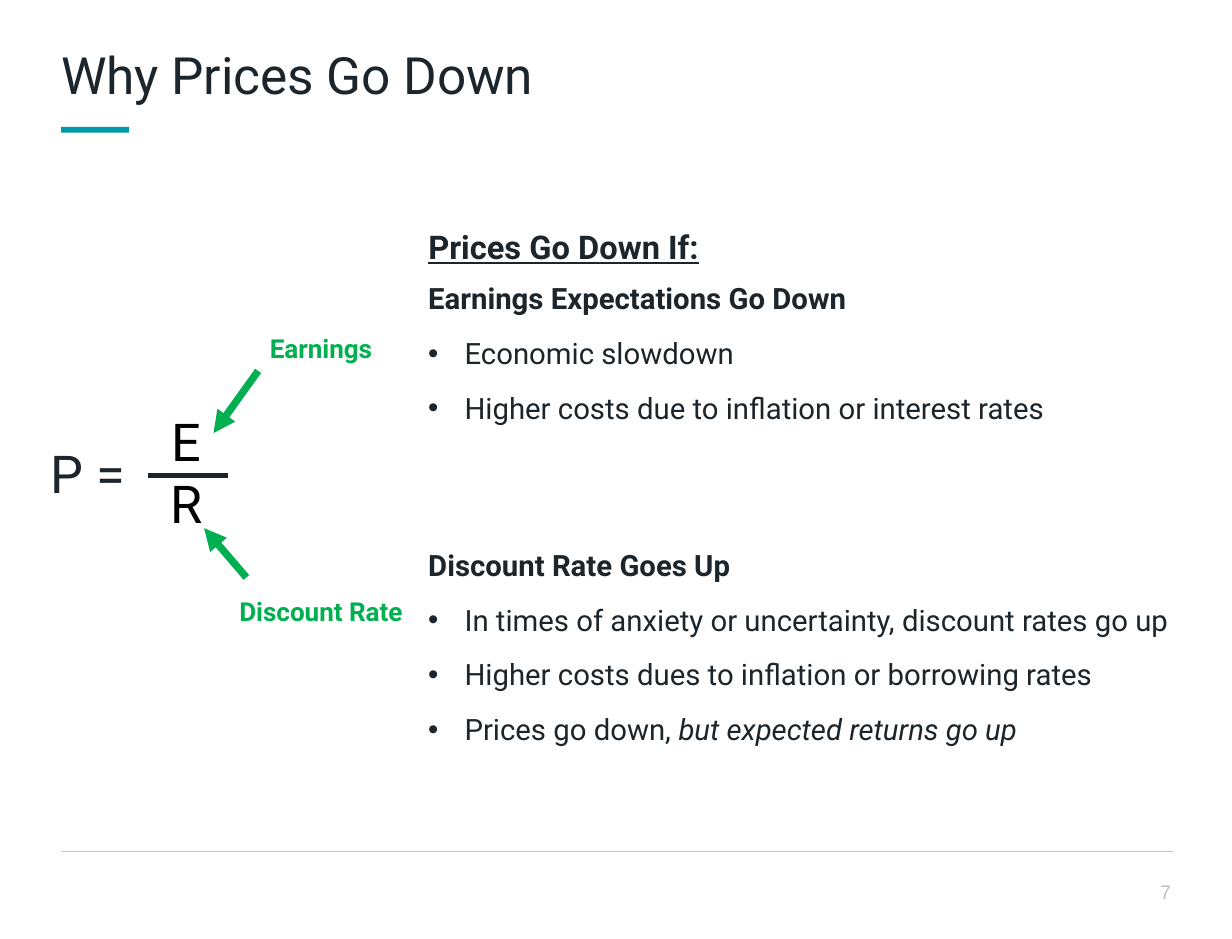
from dataclasses import dataclass

from lxml.etree import SubElement
from pptx import Presentation
from pptx.dml.color import RGBColor
from pptx.enum.shapes import MSO_CONNECTOR, MSO_SHAPE
from pptx.enum.text import MSO_ANCHOR, MSO_AUTO_SIZE, PP_ALIGN
from pptx.oxml.ns import qn
from pptx.util import Inches, Pt


@dataclass
class Theme:
    font: str = "Roboto"
    number_font: str = "Arial"
    title: str = "1D252C"
    ink: str = "1C252B"
    black: str = "000000"
    accent: str = "0099A9"
    green: str = "00B050"
    rule: str = "BBC8C5"
    number: str = "BFBFBF"
    title_size: float = 31.5
    formula_size: float = 32
    heading_size: float = 20
    body_size: float = 18
    label_size: float = 16
    number_size: float = 12


theme = Theme()


def add_text(s, at, lines, size, color, bold=False, align=PP_ALIGN.LEFT, font=theme.font):
    """Add a text box without margins; each line is a list of runs."""
    tf = s.shapes.add_textbox(*[Inches(v) for v in at]).text_frame
    tf.word_wrap = True
    tf.margin_left = tf.margin_right = tf.margin_top = tf.margin_bottom = 0
    for i, runs in enumerate(lines):
        p = tf.paragraphs[0] if i == 0 else tf.add_paragraph()
        p.alignment = align
        for text in runs:
            r = p.add_run()
            r.text = text
            r.font.name, r.font.size, r.font.bold = font, Pt(size), bold
            r.font.color.rgb = RGBColor.from_string(color)
    return tf


def add_line(s, start, end, color, width, arrow=False):
    """Add a straight line, with an arrowhead at its end if asked."""
    points = [Inches(v) for v in (*start, *end)]
    line = s.shapes.add_connector(MSO_CONNECTOR.STRAIGHT, *points)
    line.line.color.rgb = RGBColor.from_string(color)
    line.line.width = Pt(width)
    if arrow:
        SubElement(line.line._get_or_add_ln(), qn("a:tailEnd"), type="triangle")
    SubElement(line._element.spPr, qn("a:effectLst"))


prs = Presentation()
prs.slide_width, prs.slide_height = Inches(10.5), Inches(8)
s = prs.slides.add_slide(prs.slide_layouts[5])

# Title with accent bar
title = s.shapes.title
title.left, title.top = Inches(0.52), Inches(0.37)
title.width, title.height = Inches(9.46), Inches(0.55)
tf = title.text_frame
tf.text = "Why Prices Go Down"
tf.auto_size = MSO_AUTO_SIZE.NONE
tf.vertical_anchor = MSO_ANCHOR.TOP
tf.margin_left = tf.margin_right = tf.margin_top = tf.margin_bottom = 0
p = tf.paragraphs[0]
p.alignment = PP_ALIGN.LEFT
r = p.runs[0]
r.font.name, r.font.size = theme.font, Pt(theme.title_size)
r.font.color.rgb = RGBColor.from_string(theme.title)

bar = s.shapes.add_shape(MSO_SHAPE.RECTANGLE, Inches(0.52), Inches(1.08), Inches(0.58), Inches(0.05))
bar.shadow.inherit = False
bar.fill.solid()
bar.fill.fore_color.rgb = RGBColor.from_string(theme.accent)
bar.line.fill.background()

# Footer rule and page number
add_line(s, (0.52, 7.25), (10, 7.25), theme.rule, 0.25)
add_text(s, (9.41, 7.5, 0.57, 0.2), [["7"]], theme.number_size, theme.number,
         align=PP_ALIGN.RIGHT, font=theme.number_font)

# Formula: P = E / R
add_text(s, (0.43, 3.76, 0.8, 0.55), [["P ="]], theme.formula_size, theme.ink)
tf = add_text(s, (1.19, 3.49, 0.8, 1.06), [["E"], ["R"]], theme.formula_size, theme.black,
              align=PP_ALIGN.CENTER)
tf.vertical_anchor = MSO_ANCHOR.MIDDLE
add_line(s, (1.26, 4.05), (1.94, 4.05), theme.ink, 3)

# Labels pointing at the terms
for text, at, start, end in [
    ("Earnings", (2.3, 2.83, 0.95, 0.27), (2.2, 3.16), (1.82, 3.69)),
    ("Discount Rate", (2.04, 5.07, 1.5, 0.27), (2.1, 4.92), (1.74, 4.5)),
]:
    add_text(s, at, [[text]], theme.label_size, theme.green, bold=True)
    add_line(s, start, end, theme.green, 4.5, arrow=True)

# Heading of the explanation
tf = add_text(s, (3.65, 1.9, 2.59, 0.35), [["Prices Go Down If:"]], theme.heading_size,
              theme.ink, bold=True)
tf.paragraphs[0].line_spacing = 1.1
tf.paragraphs[0].runs[0].font.underline = True

# Two reasons, each a bold line followed by bullets
reasons = [
    (2.39, 1.4, [
        ["Earnings Expectations Go Down"],
        ["Economic slowdown"],
        ["Higher costs due to inflation or interest rates"],
    ]),
    (4.66, 1.85, [
        ["Discount Rate Goes Up"],
        ["In times of anxiety or uncertainty, discount rates go up"],
        ["Higher costs dues to inflation or borrowing rates"],
        ["Prices go down, ", "but expected returns go up"],
    ]),
]
for top, height, lines in reasons:
    tf = add_text(s, (3.65, top, 6.73, height), lines, theme.body_size, theme.ink)
    for i, p in enumerate(tf.paragraphs):
        p.space_after = Pt(12)
        if i == 0:
            p.runs[0].font.bold = True
            continue
        pPr = p._p.get_or_add_pPr()
        pPr.set("marL", str(Inches(0.31)))
        pPr.set("indent", str(Inches(-0.31)))
        SubElement(pPr, qn("a:buFont"), typeface="Arial")
        SubElement(pPr, qn("a:buChar"), char="•")
        for r in p.runs[1:]:
            r.font.italic = True

prs.save("out.pptx")
